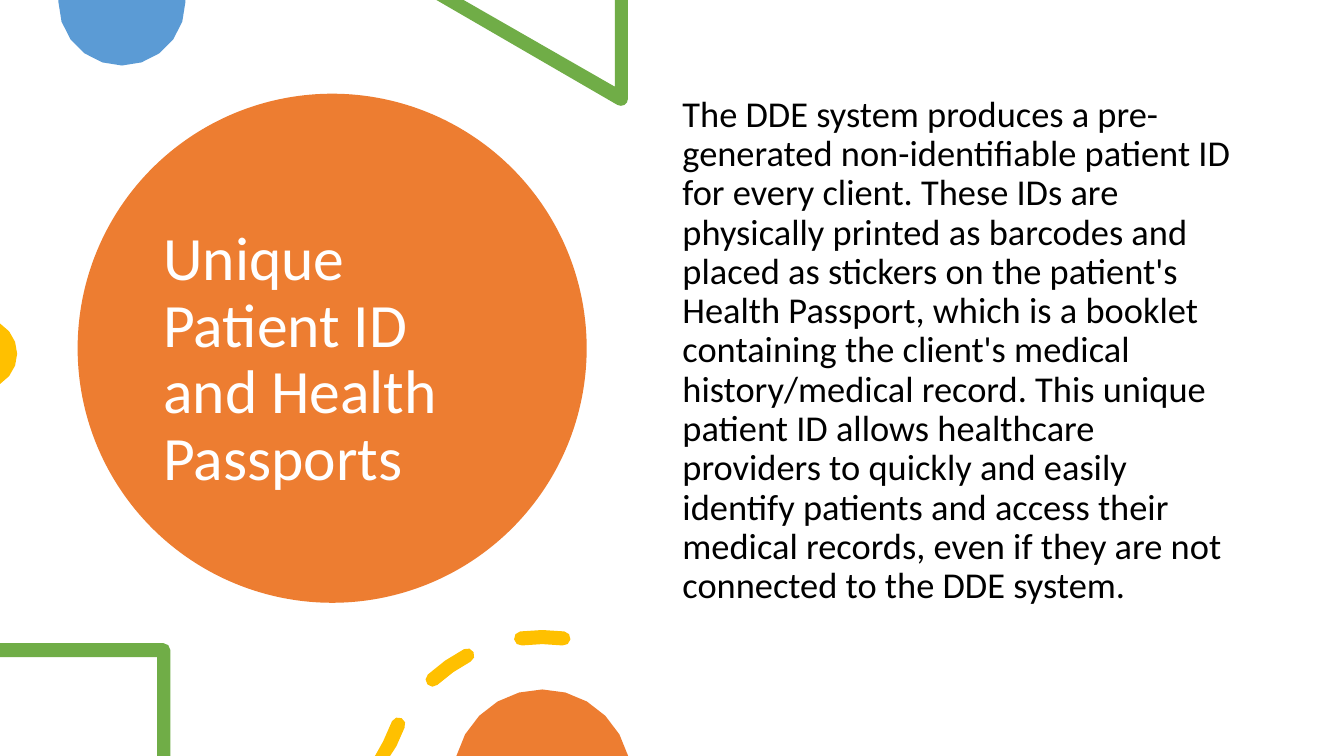
import math

import lxml.etree
import pptx
import pptx.dml.color
import pptx.enum.shapes
import pptx.enum.text
import pptx.oxml.ns
import pptx.util

# Grid: one column or row is a tenth of an inch
CELL = pptx.util.Inches(0.1)
COLUMNS, ROWS = 133.33, 75
ARC_TOLERANCE = 0.08

ORANGE, BLUE, GREEN, YELLOW = "ED7D31", "5B9BD5", "70AD47", "FFC000"
FONT = "Calibri"

TITLE = "Unique Patient ID and Health Passports"
BODY = (
    "The DDE system produces a pre-generated non-identifiable patient ID for "
    "every client. These IDs are physically printed as barcodes and placed as "
    "stickers on the patient's Health Passport, which is a booklet containing "
    "the client's medical history/medical record. This unique patient ID allows "
    "healthcare providers to quickly and easily identify patients and access "
    "their medical records, even if they are not connected to the DDE system."
)


def grid(cells):
    return round(cells * CELL)


def rgb(color):
    return pptx.dml.color.RGBColor.from_string(color)


def paint(shape, color):
    shape.shadow.inherit = False
    shape.fill.solid()
    shape.fill.fore_color.rgb = rgb(color)
    shape.line.fill.background()


def arc(x, y, radius, start, end):
    """As few points as the tolerance allows; degrees run clockwise from the right."""
    widest = 2 * math.degrees(math.acos(1 - ARC_TOLERANCE / radius))
    steps = 2 * math.ceil(abs(end - start) / widest / 2)
    angles = [math.radians(start + (end - start) * i / steps) for i in range(steps + 1)]
    return [(x + radius * math.cos(a), y + radius * math.sin(a)) for a in angles]


def dash(x, y, radius, start, sweep, half_width):
    """A round-capped piece of a ring."""
    end = start + sweep
    (tail, *_, head) = arc(x, y, radius, start, end)
    return (
        arc(x, y, radius + half_width, start, end)
        + arc(*head, half_width, end, end + 180)[1:-1]
        + arc(x, y, radius - half_width, end, start)
        + arc(*tail, half_width, start + 180, start + 360)[1:-1]
    )


def add_outline(slide, color, *contours):
    builder = None
    for contour in contours:
        first, *rest = [(grid(x), grid(y)) for x, y in contour]
        if builder is None:
            builder = slide.shapes.build_freeform(*first, scale=1.0)
        else:
            builder.move_to(*first)
        builder.add_line_segments(rest, close=True)
    outline = builder.convert_to_shape()
    paint(outline, color)
    return outline


def add_disc(slide, left, top, size, color):
    disc = slide.shapes.add_shape(
        pptx.enum.shapes.MSO_SHAPE.OVAL, *map(grid, (left, top, size, size))
    )
    paint(disc, color)
    return disc


def fill_placeholder(holder, box, text, size, color, anchor, space_before=0):
    holder.left, holder.top, holder.width, holder.height = map(grid, box)
    frame = holder.text_frame
    frame.text = text
    frame.word_wrap = True
    frame.auto_size = pptx.enum.text.MSO_AUTO_SIZE.NONE
    frame.vertical_anchor = anchor
    paragraph = frame.paragraphs[0]
    paragraph.alignment = pptx.enum.text.PP_ALIGN.LEFT
    paragraph.line_spacing = 0.9
    paragraph.space_before = pptx.util.Pt(space_before)
    font = paragraph.runs[0].font
    font.name, font.size = FONT, pptx.util.Pt(size)
    font.color.rgb = rgb(color)
    return paragraph


def remove_bullet(paragraph):
    properties = paragraph._p.get_or_add_pPr()
    properties.set("marL", "0")
    properties.set("indent", "0")
    lxml.etree.SubElement(properties, pptx.oxml.ns.qn("a:buNone"))


def add_upper_decorations(slide):
    # Top edge: blue half disc and green triangle corner
    add_outline(slide, BLUE, [(18.4, 0), *arc(12.1, 0.2, 6.3, 0, 180), (5.8, 0)])
    add_outline(
        slide, GREEN,
        [(62.3, 0), (61, 0), (61, 8.6), (46, 0), (43.3, 0), *arc(61.6, 9.8, 0.7, 120, 0)],
    )
    # Left edge: yellow disc segment
    return add_outline(slide, YELLOW, arc(-1.8, 35.1, 3.5, -59, 59))


def add_lower_decorations(slide):
    # Green frame corner
    add_outline(
        slide, GREEN,
        [(0, 63.8), (0, 65.2), (15.6, 65.2), (15.6, ROWS), (16.9, ROWS),
         *arc(16.2, 64.5, 0.7, 0, -90)],
    )
    # Yellow ring of three dashes, the lowest one ending at the foot of the slide
    lowest, *others = [dash(53.8, 79.3, 16.1, 192.5 + 35 * i, 15, 0.7) for i in range(3)]
    lowest = [(x, y) for x, y in lowest if y < ROWS] + [(38.7, ROWS), (37.2, ROWS)]
    add_outline(slide, YELLOW, lowest, *others)
    # Orange disc
    add_outline(slide, ORANGE, arc(53.8, 77.2, 8.8, 194.5, 345.5))


def main():
    presentation = pptx.Presentation()
    presentation.slide_width, presentation.slide_height = grid(COLUMNS), grid(ROWS)
    slide = presentation.slides.add_slide(presentation.slide_layouts[1])
    title, explanation = slide.shapes.title, slide.placeholders[1]
    anchors = pptx.enum.text.MSO_ANCHOR

    # Title on its orange disc, which goes behind the text
    title_disc = add_disc(slide, 7.7, 9.3, 50.5, ORANGE)
    title.element.addprevious(title_disc.element)
    fill_placeholder(
        title, (15.2, 13.5, 35.4, 44.5), TITLE, 44, "FFFFFF", anchors.MIDDLE
    )

    # Explanation on the right, in front of the upper decorations
    left_segment = add_upper_decorations(slide)
    left_segment.element.addnext(explanation.element)
    remove_bullet(fill_placeholder(
        explanation, (66.7, 9, 57.5, 53.5), BODY, 26, "000000", anchors.TOP, 10
    ))

    add_lower_decorations(slide)
    presentation.save("out.pptx")


if __name__ == "__main__":
    main()
